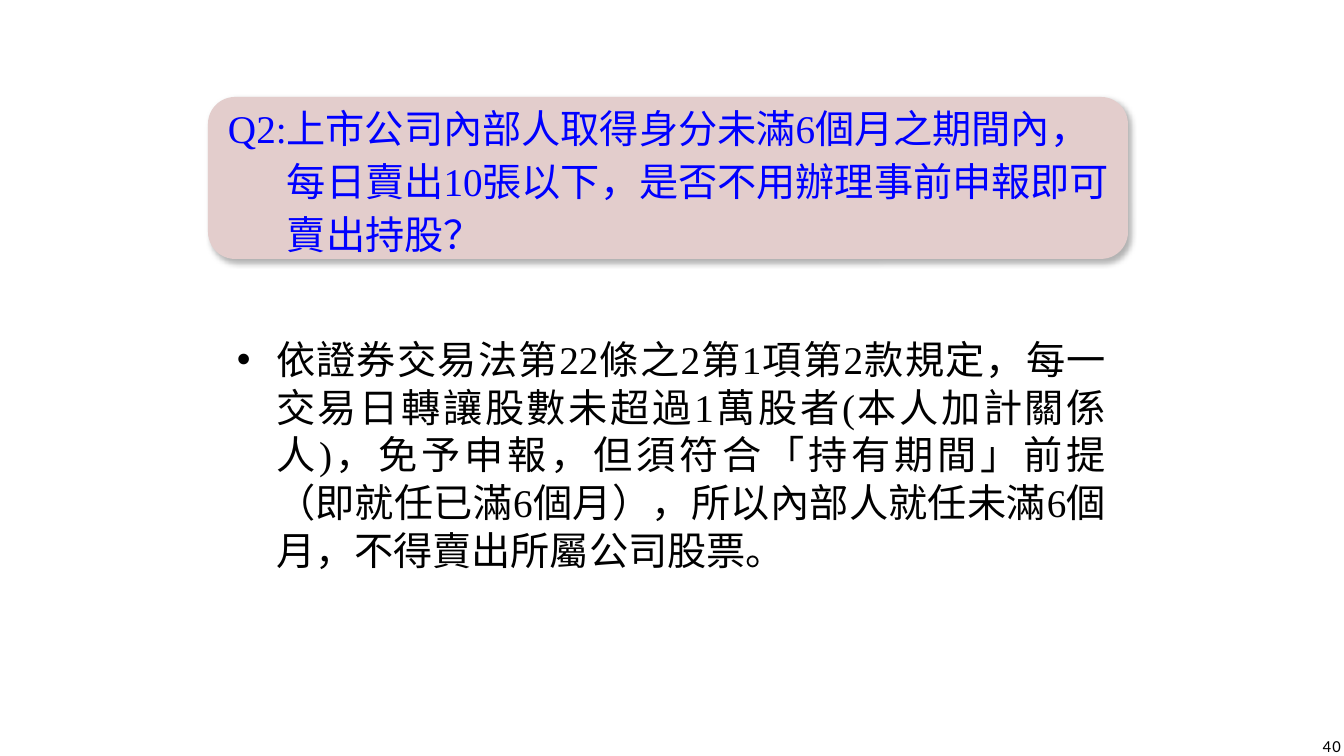
from lxml import etree
from pptx import Presentation
from pptx.dml.color import RGBColor
from pptx.enum.shapes import MSO_SHAPE
from pptx.enum.text import MSO_ANCHOR, MSO_AUTO_SIZE, PP_ALIGN
from pptx.oxml.ns import qn
from pptx.util import Pt

LEFT, RIGHT, JUSTIFY = PP_ALIGN.LEFT, PP_ALIGN.RIGHT, PP_ALIGN.JUSTIFY
TOP, MIDDLE = MSO_ANCHOR.TOP, MSO_ANCHOR.MIDDLE
NO_FIT = MSO_AUTO_SIZE.NONE
ROUND_RECT = MSO_SHAPE.ROUNDED_RECTANGLE

QUESTION = "Q2:上市公司內部人取得身分未滿6個月之期間內，每日賣出10張以下，是否不用辦理事前申報即可賣出持股？"
ANSWER = (
    "依證券交易法第22條之2第1項第2款規定，每一交易日轉讓股數未超過1萬股者"
    "(本人加計關係人)，免予申報，但須符合「持有期間」前提（即就任已滿6個月），"
    "所以內部人就任未滿6個月，不得賣出所屬公司股票。"
)
PAGE = "40"

CARD_BOX = (208, 97, 920, 162)
QUESTION_BOX = (216, 105, 905, 146)
ANSWER_BOX = (208, 275, 920, 355)
PAGE_BOX = (1291, 726, 60, 40)


def px(n):
    return round(n * 914400 / 100.8)


def color(value):
    return RGBColor.from_string(value)


def place(s, box):
    s.left, s.top, s.width, s.height = map(px, box)


def write(s, text, size=28, font="Times New Roman", fill="000000", align=LEFT,
          anchor=TOP, insets=(10, 5, 10, 5), hang=0, line=None, after=0, spacing=0):
    tf = s.text_frame
    tf.word_wrap = True
    tf.auto_size = NO_FIT
    tf.vertical_anchor = anchor
    tf.margin_left, tf.margin_top, tf.margin_right, tf.margin_bottom = map(px, insets)
    p = tf.paragraphs[0]
    p.alignment = align
    p.space_before, p.space_after = Pt(0), Pt(after)
    if line:
        p.line_spacing = Pt(line)
    pPr = p._p.get_or_add_pPr()
    pPr.set("marL", str(px(hang)))
    pPr.set("indent", str(-px(hang)))
    r = p.add_run()
    r.text = text
    r.font.size, r.font.name = Pt(size), font
    r.font.color.rgb = color(fill)
    if spacing:
        r._r.get_or_add_rPr().set("spc", str(spacing * 100))


def add_shadow(s, blur, dist, angle, alpha):
    s.shadow.inherit = False
    effects = s._element.spPr.find(qn("a:effectLst"))
    outer = etree.SubElement(effects, qn("a:outerShdw"), blurRad=str(Pt(blur)),
                             dist=str(Pt(dist)), dir=str(angle * 60000), rotWithShape="0")
    tint = etree.SubElement(outer, qn("a:srgbClr"), val="000000")
    etree.SubElement(tint, qn("a:alpha"), val=str(alpha * 1000))


prs = Presentation()
prs.slide_width, prs.slide_height = px(1344), px(756)
slide = prs.slides.add_slide(prs.slide_layouts[1])

card = slide.shapes.add_shape(ROUND_RECT, *map(px, CARD_BOX))
card.fill.solid()
card.fill.fore_color.rgb = color("E3CDCC")
card.line.fill.background()
add_shadow(card, blur=4.5, dist=2.6, angle=53, alpha=30)
slide.shapes._spTree.insert(2, card._element)

question = slide.shapes.title
place(question, QUESTION_BOX)
write(question, QUESTION, fill="0000FF", anchor=MIDDLE, insets=(12, 12, 12, 12),
      hang=59, line=38, after=10)

answer = slide.placeholders[1]
place(answer, ANSWER_BOX)
write(answer, ANSWER, align=JUSTIFY, insets=(29, 60, 22, 4), hang=39, line=34, after=6)

page = slide.shapes.add_textbox(*map(px, PAGE_BOX))
write(page, PAGE, size=12, font="Calibri", align=RIGHT, anchor=MIDDLE, spacing=1)

prs.save("out.pptx")
